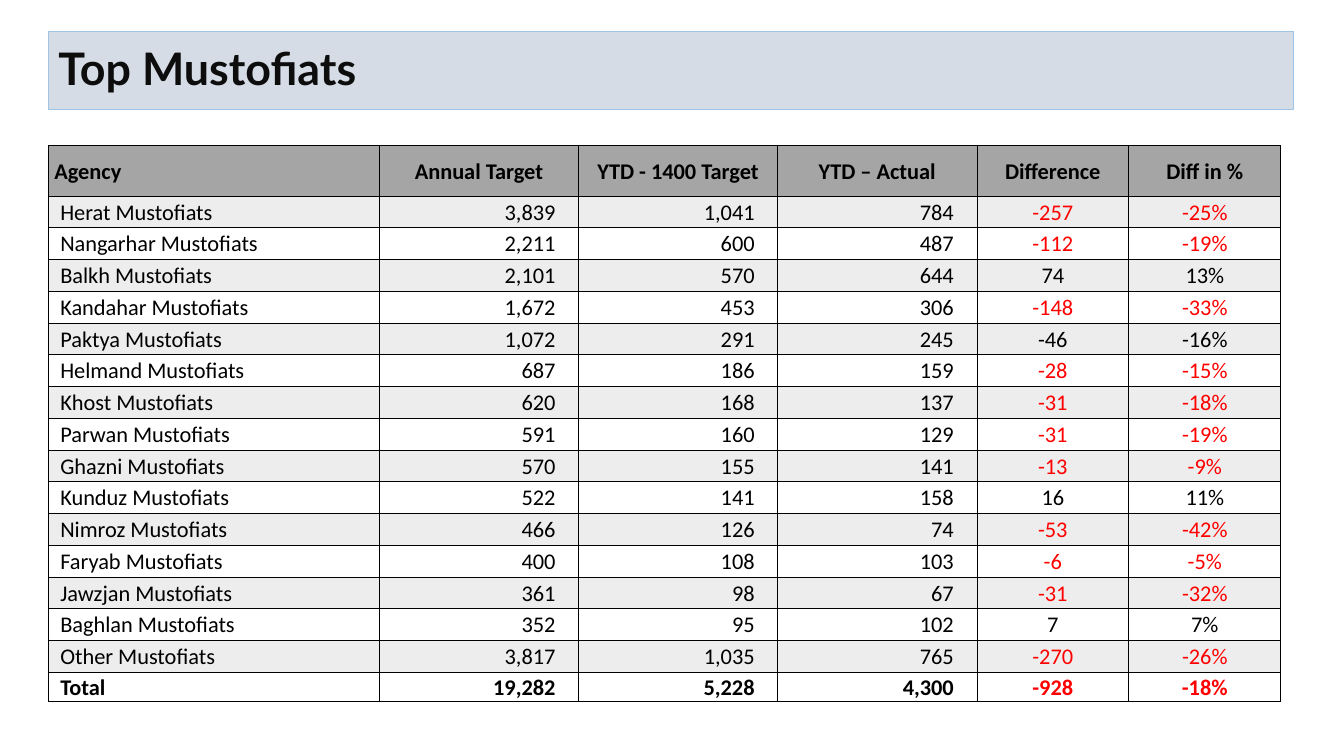
from dataclasses import dataclass

from lxml import etree
from pptx import Presentation, util as u
from pptx.dml.color import RGBColor
from pptx.enum import text
from pptx.oxml import ns

BLACK, RED = "000000", "FF0000"
HEADER_FILL, BAND_FILL = "A5A5A5", "EDEDED"
COLUMN_WIDTHS = (8.34, 5.02, 5.02, 5.02, 3.83, 3.83)
HEADER_HEIGHT, AGENCY_HEIGHT, TOTAL_HEIGHT = 1.27, 0.8, 0.74
HEADINGS = ("Agency", "Annual Target", "YTD - 1400 Target", "YTD – Actual", "Difference", "Diff in %")


@dataclass
class Agency:
    name: str
    annual: int
    target: int
    actual: int
    difference: int
    percent: int
    shortfall_in_red: bool = True

    def texts(self) -> tuple[str, ...]:
        amounts = (self.annual, self.target, self.actual)
        return (self.name, *(f"{amount:,}" for amount in amounts),
                str(self.difference), f"{self.percent}%")


@dataclass
class CellStyle:
    align: text.PP_ALIGN
    left: float = 0.03
    right: float = 0.03
    color: str = BLACK
    bold: bool = False
    fill: str | None = None


AGENCIES = [
    Agency("Herat Mustofiats", 3839, 1041, 784, -257, -25),
    Agency("Nangarhar Mustofiats", 2211, 600, 487, -112, -19),
    Agency("Balkh Mustofiats", 2101, 570, 644, 74, 13),
    Agency("Kandahar Mustofiats", 1672, 453, 306, -148, -33),
    Agency("Paktya Mustofiats", 1072, 291, 245, -46, -16, shortfall_in_red=False),
    Agency("Helmand Mustofiats", 687, 186, 159, -28, -15),
    Agency("Khost Mustofiats", 620, 168, 137, -31, -18),
    Agency("Parwan Mustofiats", 591, 160, 129, -31, -19),
    Agency("Ghazni Mustofiats", 570, 155, 141, -13, -9),
    Agency("Kunduz Mustofiats", 522, 141, 158, 16, 11),
    Agency("Nimroz Mustofiats", 466, 126, 74, -53, -42),
    Agency("Faryab Mustofiats", 400, 108, 103, -6, -5),
    Agency("Jawzjan Mustofiats", 361, 98, 67, -31, -32),
    Agency("Baghlan Mustofiats", 352, 95, 102, 7, 7),
    Agency("Other Mustofiats", 3817, 1035, 765, -270, -26),
]
TOTAL = Agency("Total", 19282, 5228, 4300, -928, -18)


def rgb(hex_color: str) -> RGBColor:
    return RGBColor.from_string(hex_color)


def apply(target, values: dict) -> None:
    for attribute, value in values.items():
        setattr(target, attribute, value)


def paint(fill, color: str | None) -> None:
    if color is None:
        fill.background()
    else:
        fill.solid()
        fill.fore_color.rgb = rgb(color)


def format_font(font, name: str, size: float, color: str, bold: bool) -> None:
    apply(font, {"name": name, "size": u.Pt(size), "bold": bold})
    font.color.rgb = rgb(color)


def add_borders(cell) -> None:
    properties = cell._tc.get_or_add_tcPr()
    for position, side in enumerate(("lnL", "lnR", "lnT", "lnB")):
        border = etree.Element(ns.qn(f"a:{side}"), w=str(u.Pt(0.5)))
        solid = etree.SubElement(border, ns.qn("a:solidFill"))
        etree.SubElement(solid, ns.qn("a:srgbClr"), val=BLACK)
        properties.insert(position, border)


def write_cell(cell, words: str, style: CellStyle) -> None:
    apply(cell, {
        "text": words,
        "vertical_anchor": text.MSO_ANCHOR.MIDDLE,
        "margin_left": u.Cm(style.left),
        "margin_right": u.Cm(style.right),
        "margin_top": u.Cm(0.03),
        "margin_bottom": 0,
    })
    paragraph = cell.text_frame.paragraphs[0]
    paragraph.alignment = style.align
    format_font(paragraph.runs[0].font, "Calibri", 16, style.color, style.bold)
    paint(cell.fill, style.fill)
    add_borders(cell)


def header_style(column: int) -> CellStyle:
    if column == 0:
        return CellStyle(text.PP_ALIGN.LEFT, left=0.15, bold=True, fill=HEADER_FILL)
    return CellStyle(text.PP_ALIGN.CENTER, bold=True, fill=HEADER_FILL)


def agency_style(agency: Agency, column: int, fill: str | None) -> CellStyle:
    bold = agency is TOTAL
    if column == 0:
        return CellStyle(text.PP_ALIGN.LEFT, left=0.3, bold=bold, fill=fill)
    if column <= 3:
        return CellStyle(text.PP_ALIGN.RIGHT, right=0.58, bold=bold, fill=fill)
    in_red = agency.difference < 0 and agency.shortfall_in_red
    return CellStyle(text.PP_ALIGN.CENTER, color=RED if in_red else BLACK, bold=bold, fill=fill)


def add_title(slide) -> None:
    title = slide.shapes.title
    apply(title, {"left": u.Cm(1.22), "top": u.Cm(0.79), "width": u.Cm(31.37), "height": u.Cm(1.98)})
    paint(title.fill, "D6DCE5")
    title.line.color.rgb = rgb("9DC3E6")
    title.line.width = u.Pt(0.75)
    frame = title.text_frame
    apply(frame, {
        "text": "Top Mustofiats",
        "vertical_anchor": text.MSO_ANCHOR.MIDDLE,
        "auto_size": text.MSO_AUTO_SIZE.NONE,
        "word_wrap": True,
    })
    paragraph = frame.paragraphs[0]
    apply(paragraph, {"alignment": text.PP_ALIGN.LEFT, "line_spacing": 0.9})
    format_font(paragraph.runs[0].font, "Lato", 32, "0D0D0D", True)


def add_agency_table(slide) -> None:
    heights = [HEADER_HEIGHT, *[AGENCY_HEIGHT] * len(AGENCIES), TOTAL_HEIGHT]
    table = slide.shapes.add_table(
        len(heights), len(HEADINGS), u.Cm(1.22), u.Cm(3.67),
        u.Cm(sum(COLUMN_WIDTHS)), u.Cm(sum(heights))).table
    table.horz_banding = False
    for column, width in zip(table.columns, COLUMN_WIDTHS):
        column.width = u.Cm(width)
    for row, height in zip(table.rows, heights):
        row.height = u.Cm(height)

    for column, heading in enumerate(HEADINGS):
        write_cell(table.cell(0, column), heading, header_style(column))
    for row, agency in enumerate([*AGENCIES, TOTAL], start=1):
        fill = BAND_FILL if row % 2 else None
        for column, words in enumerate(agency.texts()):
            write_cell(table.cell(row, column), words, agency_style(agency, column, fill))


def main() -> None:
    deck = Presentation()
    apply(deck, {"slide_width": u.Cm(33.87), "slide_height": u.Cm(19.05)})
    slide = deck.slides.add_slide(deck.slide_layouts.get_by_name("Title Only"))
    add_title(slide)
    add_agency_table(slide)
    deck.save("out.pptx")


if __name__ == "__main__":
    main()
